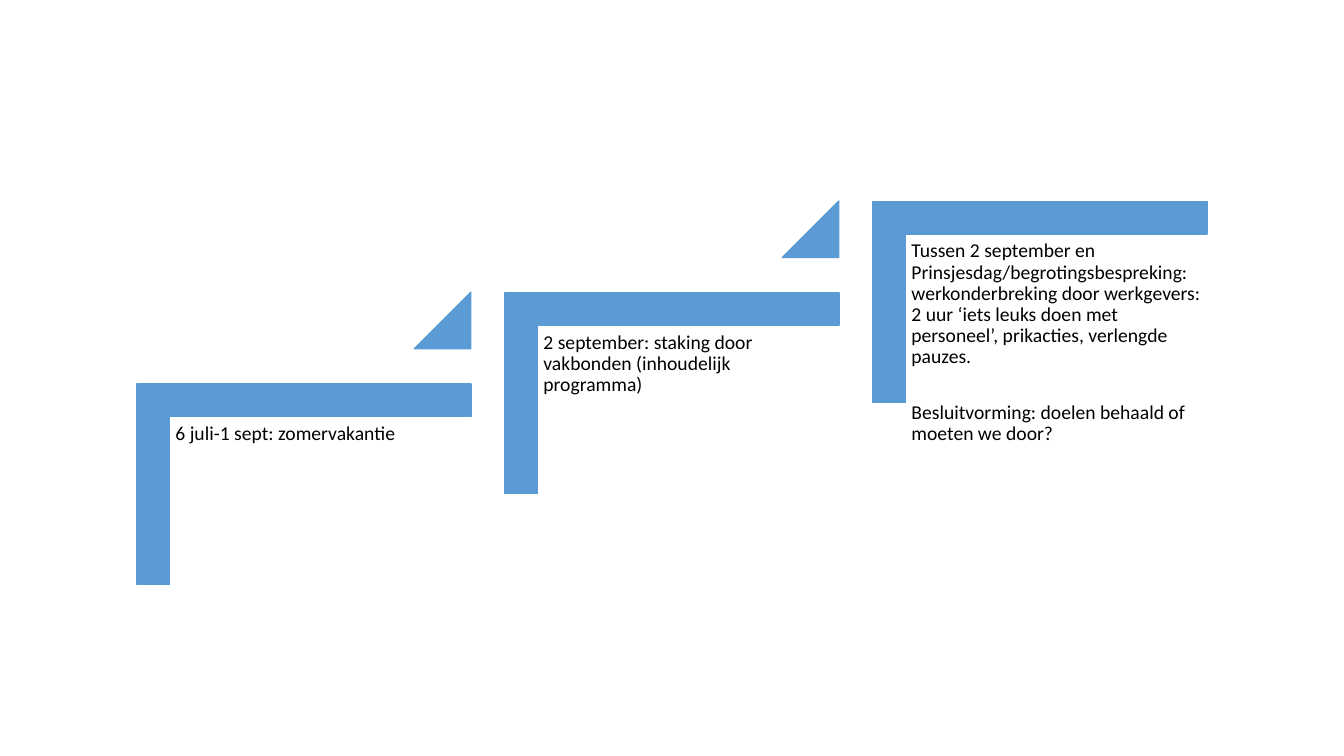
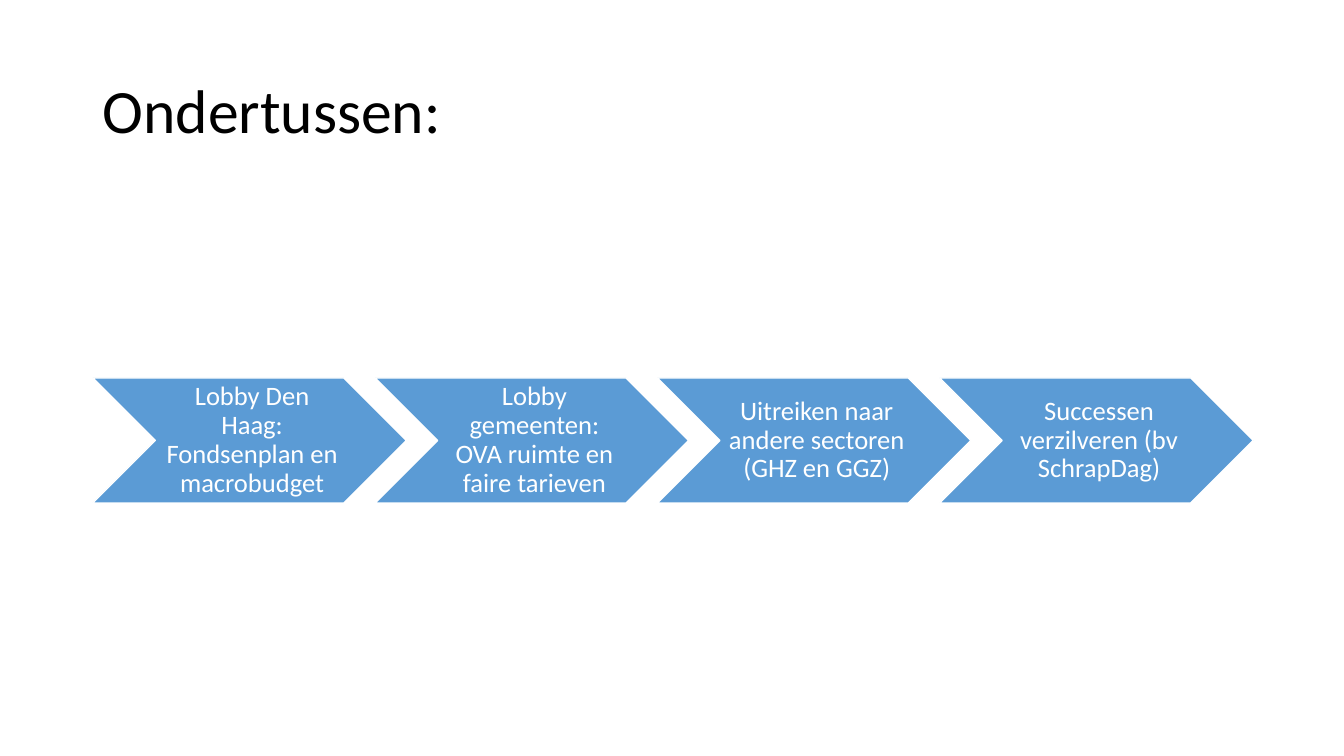
from dataclasses import dataclass

import pptx
import pptx.dml.color
import pptx.enum.shapes
import pptx.enum.text
import pptx.util

Inches = pptx.util.Inches
Pt = pptx.util.Pt
Shape = pptx.enum.shapes.MSO_SHAPE
Align = pptx.enum.text.PP_ALIGN
Anchor = pptx.enum.text.MSO_ANCHOR


@dataclass(frozen=True)
class Theme:
    font: str = "Calibri"
    accent: str = "5B9BD5"
    dark: str = "000000"
    light: str = "FFFFFF"
    title_size: int = 44
    step_size: int = 14
    chevron_size: int = 19
    line_spacing: float = 0.9
    paragraph_gap: float = 24.6


THEME = Theme()

STEPS = [
    ["6 juli-1 sept: zomervakantie"],
    ["2 september: staking door vakbonden (inhoudelijk programma)"],
    [
        "Tussen 2 september en Prinsjesdag/begrotingsbespreking: "
        "werkonderbreking door werkgevers: 2 uur ‘iets leuks doen met "
        "personeel’, prikacties, verlengde pauzes.",
        "Besluitvorming: doelen behaald of moeten we door?",
    ],
]

ACTIONS = [
    "Lobby Den Haag: Fondsenplan en macrobudget",
    "Lobby gemeenten: OVA ruimte en faire tarieven",
    "Uitreiken naar andere sectoren (GHZ en GGZ)",
    "Successen verzilveren (bv SchrapDag)",
]


def rgb(value):
    return pptx.dml.color.RGBColor.from_string(value)


def write(tf, paragraphs, size, color, insets, align=Align.LEFT, anchor=Anchor.TOP):
    tf.word_wrap = True
    tf.vertical_anchor = anchor
    tf.margin_left, tf.margin_top, tf.margin_right, tf.margin_bottom = map(Inches, insets)
    for i, text in enumerate(paragraphs):
        p = tf.add_paragraph() if i else tf.paragraphs[0]
        p.text = text
        p.alignment = align
        p.line_spacing = THEME.line_spacing
        p.space_before = Pt(THEME.paragraph_gap if i else 0)
        p.font.name = THEME.font
        p.font.size = Pt(size)
        p.font.color.rgb = rgb(color)


def add_text(s, box, paragraphs, size, insets, anchor=Anchor.TOP):
    sp = s.shapes.add_textbox(*map(Inches, box))
    write(sp.text_frame, paragraphs, size, THEME.dark, insets, anchor=anchor)


def add_block(s, kind, box, line, adjustments=()):
    sp = s.shapes.add_shape(kind, *map(Inches, box))
    sp.shadow.inherit = False
    sp.fill.solid()
    sp.fill.fore_color.rgb = rgb(THEME.accent)
    sp.line.color.rgb = rgb(line)
    sp.line.width = Pt(1)
    for i, value in enumerate(adjustments):
        sp.adjustments[i] = value
    return sp


def add_step(s, left, top, paragraphs):
    corner = add_block(s, Shape.CORNER, (left + 0.66, top - 0.66, 1.99, 3.31),
                       THEME.accent, (0.161, 0.161))
    corner.rotation = 90
    add_text(s, (left + 0.32, top + 0.33, 2.99, 2.62), paragraphs,
             THEME.step_size, (0.06,) * 4)


def add_rise(s, left, top):
    add_block(s, Shape.ISOSCELES_TRIANGLE, (left + 2.75, top - 0.91, 0.56, 0.56),
              THEME.accent, (1,))


def add_chevron(s, left, text):
    sp = add_block(s, Shape.CHEVRON, (left, 3.75, 3.11, 1.24), THEME.light, (0.5,))
    write(sp.text_frame, [text], THEME.chevron_size, THEME.light,
          (0.08, 0.03, 0.03, 0.03), Align.CENTER, Anchor.MIDDLE)


def add_title(s, text):
    add_text(s, (0.92, 0.4, 11.5, 1.45), [text], THEME.title_size,
             (0.1, 0.05, 0.1, 0.05), Anchor.MIDDLE)


def build_staircase(s):
    for i, paragraphs in enumerate(STEPS):
        left, top = 1.36 + 3.65 * i, 3.81 - 0.905 * i
        add_step(s, left, top, paragraphs)
        if i < len(STEPS) - 1:
            add_rise(s, left, top)


def build_actions(s):
    add_title(s, "Ondertussen:")
    for i, text in enumerate(ACTIONS):
        add_chevron(s, 0.92 + 2.8 * i, text)


def main():
    prs = pptx.Presentation()
    prs.slide_width, prs.slide_height = Inches(13.33), Inches(7.5)
    for build in (build_staircase, build_actions):
        build(prs.slides.add_slide(prs.slide_layouts[6]))
    prs.save("out.pptx")


if __name__ == "__main__":
    main()
